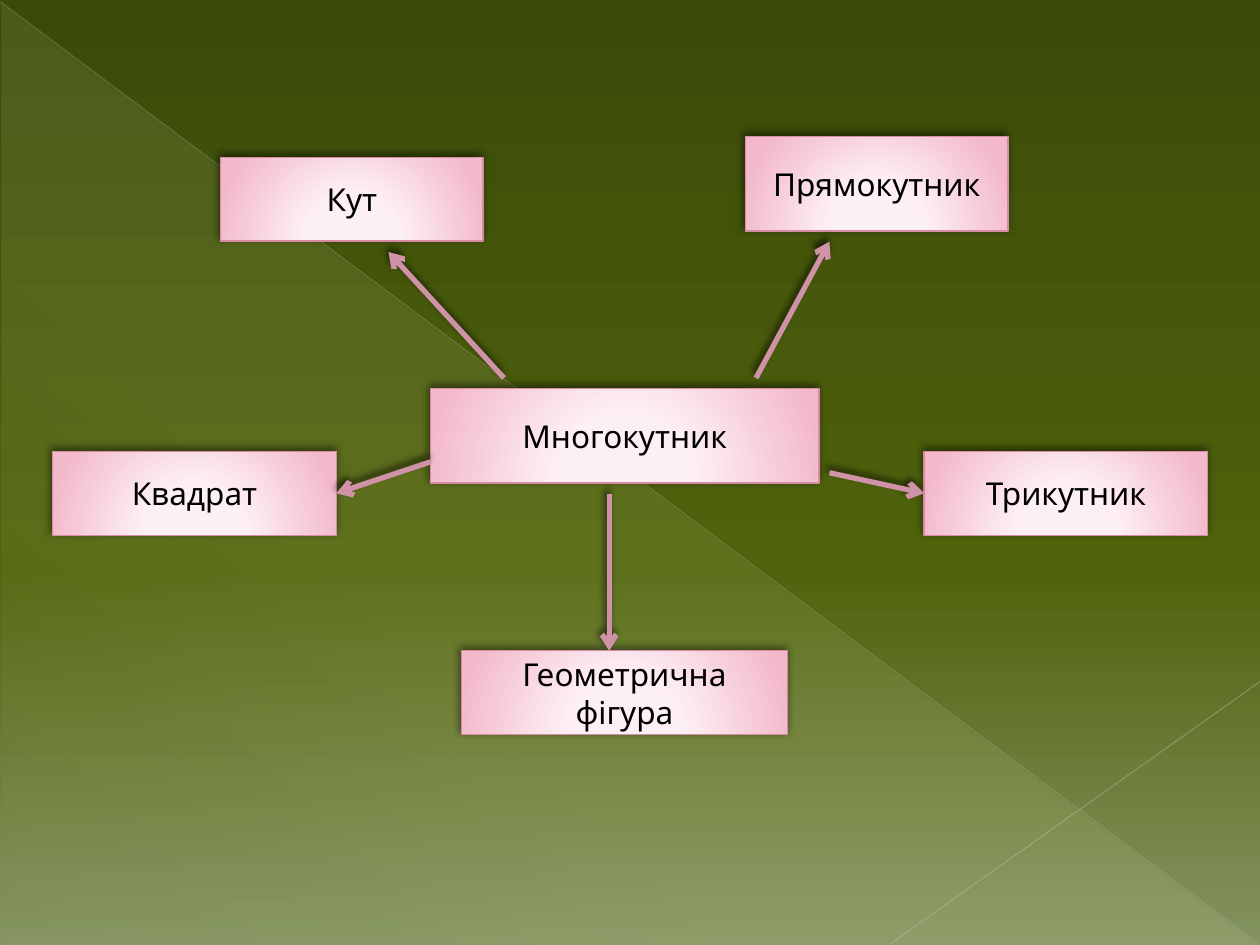
from dataclasses import dataclass
from typing import NamedTuple, Optional

from lxml.etree import SubElement
from pptx import Presentation
from pptx.dml.color import RGBColor
from pptx.enum.shapes import MSO_CONNECTOR, MSO_SHAPE
from pptx.enum.text import MSO_ANCHOR, PP_ALIGN
from pptx.oxml.ns import qn
from pptx.util import Cm, Pt


class Stop(NamedTuple):
    position: int
    color: str
    alpha: int = 100


class Shadow(NamedTuple):
    alpha: int
    blur: float
    distance: float
    angle: int = 245
    color: str = "000000"


class Point(NamedTuple):
    x: float
    y: float


@dataclass(frozen=True)
class Theme:
    font: str = "Quicksand"
    text_size: int = 18
    text_color: str = "000000"
    background: tuple = (Stop(0, "3B4A09"), Stop(60, "4F630C"), Stop(100, "849360"))
    glow: tuple = (Stop(0, "FEFAC9", 10), Stop(70, "FEFAC9", 8), Stop(100, "FEFAC9", 1))
    card: tuple = (Stop(0, "FFF3F6"), Stop(34, "FDF0F4"), Stop(100, "F3B9CA"))
    card_line: str = "D68CA5"
    card_line_width: float = 0.75
    card_shadow: Shadow = Shadow(50, 5, 2)
    arrow: str = "D092A7"
    arrow_width: float = 3
    arrow_shadow: Shadow = Shadow(60, 4, 3)


@dataclass(frozen=True)
class Card:
    text: str
    left: float
    top: float
    width: float
    height: float = 1.69


@dataclass(frozen=True)
class Arrow:
    start: Point
    end: Point
    target: Optional[str] = None
    side: int = 0


@dataclass(frozen=True)
class Ray:
    start: Point
    end: Point
    color: str
    width: float
    alpha: int


THEME = Theme()
WIDTH, HEIGHT = 25.4, 19.05

RAYS = [
    Ray(Point(0, 0.03), Point(25.37, 19.02), "BABDB3", 0.39, 35),
    Ray(Point(WIDTH, 13.74), Point(17.96, 19.02), "C1C4BC", 0.47, 45),
]
CARDS = [
    Card("Многокутник", 8.68, 7.83, 7.83, 1.91),
    Card("Кут", 4.45, 3.17, 5.29),
    Card("Прямокутник", 15.03, 2.75, 5.29, 1.91),
    Card("Квадрат", 1.06, 9.1, 5.72),
    Card("Трикутник", 18.63, 9.1, 5.72),
    Card("Геометрична фігура", 9.31, 13.12, 6.56),
]
ARROWS = [
    Arrow(Point(15.24, 7.62), Point(16.72, 4.87)),
    Arrow(Point(10.16, 7.62), Point(7.83, 5.08)),
    Arrow(Point(8.68, 9.31), Point(6.78, 9.95), "Квадрат", 3),
    Arrow(Point(12.28, 9.95), Point(12.28, 13.12)),
    Arrow(Point(16.72, 9.53), Point(18.63, 9.95), "Трикутник", 1),
]


def set_attributes(target, values: dict) -> None:
    for name, value in values.items():
        setattr(target, name, value)


def add_element(parent, tag: str, **attributes):
    texts = {name: str(value) for name, value in attributes.items()}
    return SubElement(parent, qn(tag), texts)


def add_color(parent, color: str, alpha: int) -> None:
    node = add_element(parent, "a:srgbClr", val=color)
    if alpha < 100:
        add_element(node, "a:alpha", val=alpha * 1000)


def set_gradient(fill, holder, stops: tuple, angle: Optional[int] = None) -> None:
    """Linear at the given angle, or circular around a point below the shape."""
    fill.solid()
    solid = holder.find(qn("a:solidFill"))
    gradient = add_element(holder, "a:gradFill", rotWithShape=1)
    holder.replace(solid, gradient)
    stop_list = add_element(gradient, "a:gsLst")
    for stop in stops:
        node = add_element(stop_list, "a:gs", pos=stop.position * 1000)
        add_color(node, stop.color, stop.alpha)
    if angle is None:
        circle = add_element(gradient, "a:path", path="circle")
        add_element(circle, "a:fillToRect", l=50000, t=155000, r=50000, b=-55000)
    else:
        add_element(gradient, "a:lin", ang=angle * 60000, scaled=0)


def add_effects(properties, shadow: Optional[Shadow] = None) -> None:
    effects = add_element(properties, "a:effectLst")
    if shadow:
        outer = add_element(
            effects, "a:outerShdw", blurRad=Pt(shadow.blur), dist=Pt(shadow.distance),
            dir=shadow.angle * 60000, algn="ctr", rotWithShape=0)
        add_color(outer, shadow.color, shadow.alpha)


def set_line(line, color: str, width: float) -> None:
    line.color.rgb = RGBColor.from_string(color)
    line.width = Pt(width)


def add_line(page, start: Point, end: Point, color: str, width: float):
    line = page.shapes.add_connector(
        MSO_CONNECTOR.STRAIGHT, *(Cm(value) for value in (*start, *end)))
    set_line(line.line, color, width)
    return line


def draw_ray(page, ray: Ray) -> None:
    line = add_line(page, ray.start, ray.end, ray.color, ray.width)
    properties = line._element.spPr
    color = properties.find(f".//{qn('a:srgbClr')}")
    add_element(color, "a:alpha", val=ray.alpha * 1000)
    add_effects(properties)


def draw_card(page, card: Card):
    box = page.shapes.add_shape(
        MSO_SHAPE.RECTANGLE, Cm(card.left), Cm(card.top), Cm(card.width), Cm(card.height))
    properties = box._element.spPr
    set_gradient(box.fill, properties, THEME.card)
    set_line(box.line, THEME.card_line, THEME.card_line_width)
    add_effects(properties, THEME.card_shadow)
    set_attributes(box.text_frame, {"word_wrap": True, "vertical_anchor": MSO_ANCHOR.MIDDLE})
    para = box.text_frame.paragraphs[0]
    para.alignment = PP_ALIGN.CENTER
    span = para.add_run()
    span.text = card.text
    set_attributes(span.font, {"name": THEME.font, "size": Pt(THEME.text_size)})
    span.font.color.rgb = RGBColor.from_string(THEME.text_color)
    return box


def draw_arrow(page, arrow: Arrow, boxes: dict) -> None:
    line = add_line(page, arrow.start, arrow.end, THEME.arrow, THEME.arrow_width)
    if arrow.target:
        line.end_connect(boxes[arrow.target], arrow.side)
    properties = line._element.spPr
    add_element(properties.find(qn("a:ln")), "a:tailEnd", type="arrow")
    add_effects(properties, THEME.arrow_shadow)


def main() -> None:
    deck = Presentation()
    set_attributes(deck, {"slide_width": Cm(WIDTH), "slide_height": Cm(HEIGHT)})
    page = deck.slides.add_slide(deck.slide_layouts[6])

    # Background with a pale triangle and two thin rays
    fill = page.background.fill
    fill.solid()
    backdrop = page._element.find(f".//{qn('p:bgPr')}")
    set_gradient(fill, backdrop, THEME.background, 90)
    glow = page.shapes.add_shape(
        MSO_SHAPE.RIGHT_TRIANGLE, Cm(0.03), Cm(0.05), Cm(25.35), Cm(19))
    set_gradient(glow.fill, glow._element.spPr, THEME.glow, 133)
    glow.line.fill.background()
    glow.shadow.inherit = False
    for ray in RAYS:
        draw_ray(page, ray)

    # Concept cards and the arrows from the central one
    boxes = {card.text: draw_card(page, card) for card in CARDS}
    for arrow in ARROWS:
        draw_arrow(page, arrow, boxes)

    deck.save("out.pptx")


if __name__ == "__main__":
    main()
